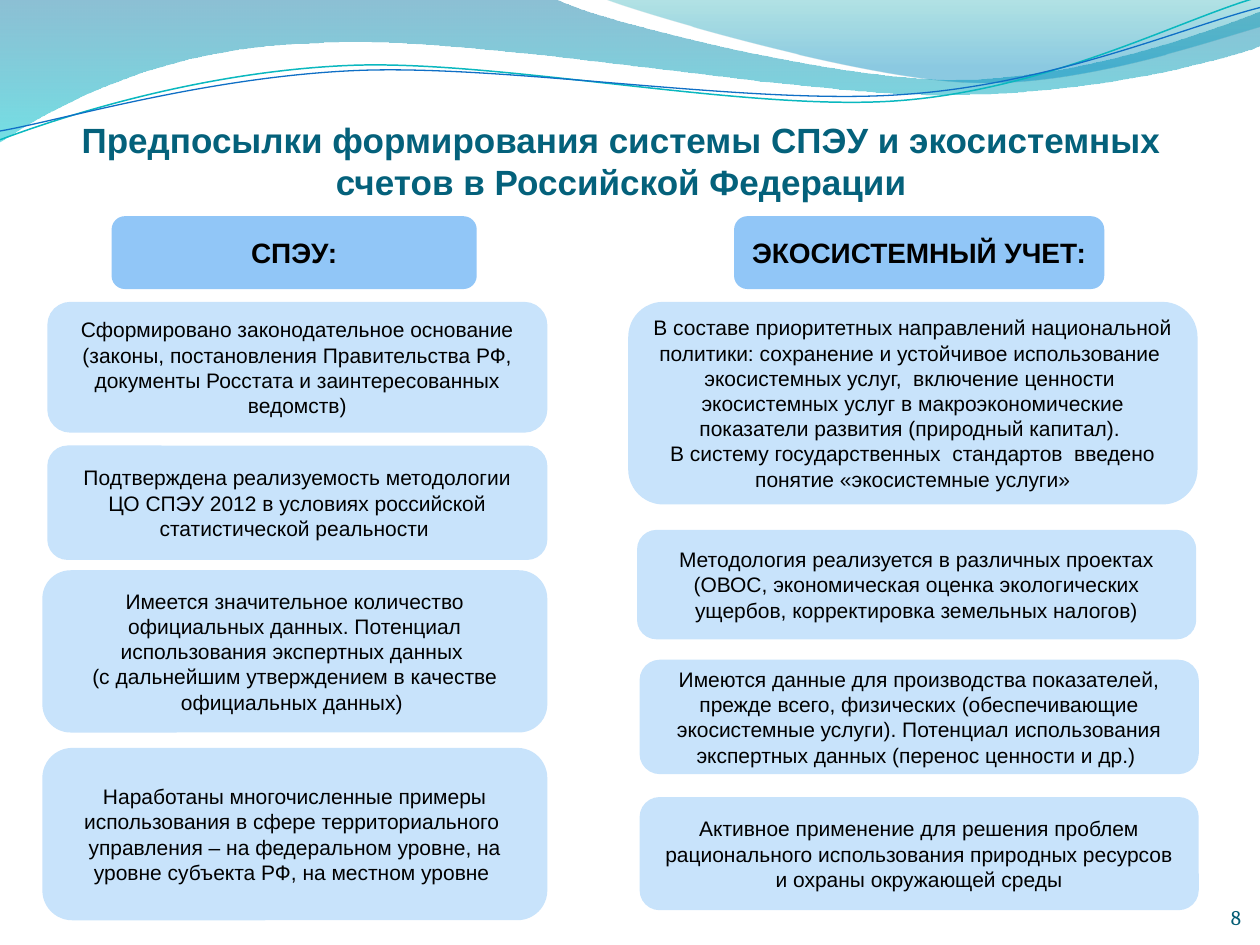
from copy import deepcopy
from dataclasses import dataclass

from lxml import etree
from pptx import Presentation
from pptx.dml.color import RGBColor
from pptx.enum.shapes import MSO_SHAPE
from pptx.enum.text import MSO_ANCHOR, PP_ALIGN
from pptx.oxml.ns import qn
from pptx.util import Inches, Pt

ROUND_RECT = MSO_SHAPE.ROUNDED_RECTANGLE
MIDDLE, BOTTOM = MSO_ANCHOR.MIDDLE, MSO_ANCHOR.BOTTOM
CENTER, RIGHT = PP_ALIGN.CENTER, PP_ALIGN.RIGHT


@dataclass(frozen=True)
class TextStyle:
    size: float
    color: str
    font: str = "Arial"
    bold: bool = False


@dataclass(frozen=True)
class Theme:
    title: TextStyle = TextStyle(20, "04617B", bold=True)
    header: TextStyle = TextStyle(16, "000000", bold=True)
    body: TextStyle = TextStyle(12, "000000")
    number: TextStyle = TextStyle(12, "045D75", "Cambria")
    header_fill: str = "91C6F7"
    body_fill: str = "C8E3FB"
    border: float = 2


THEME = Theme()


@dataclass(frozen=True)
class Box:
    left: float
    top: float
    width: float
    height: float
    text: str
    header: bool = False


@dataclass(frozen=True)
class Stop:
    position: float
    color: str
    opacity: int


@dataclass(frozen=True)
class Wave:
    """Outline of straight (2 numbers) and cubic (6 numbers) segments."""
    start: tuple[float, float]
    segments: list[tuple[float, ...]]
    stops: tuple[Stop, ...] = ()
    line: str = ""
    weight: float = 0


WAVES = [
    Wave((0, 0), [(4.4, -0.01), (4.76, 0.17, 6.64, 0.63, 7.58, 0.63),
                  (8.53, 0.63, 9.58, 0.26, 10, 0.09), (10.01, 0.36),
                  (9.83, 0.44, 8.7, 0.76, 7.46, 0.75),
                  (6.22, 0.75, 3.82, 0.28, 2.57, 0.34),
                  (1.29, 0.36, 0.46, 0.83, -0.01, 1.13), (0, 0)],
         (Stop(0, "0074A1", 45), Stop(1, "00C6CF", 55))),
    Wave((4.79, -0.01), [(5.09, 0.11, 6.82, 0.62, 7.69, 0.65),
                         (8.56, 0.69, 9.61, 0.32, 10, 0.21), (10, 0), (4.79, -0.01)],
         (Stop(0, "00A1A9", 30), Stop(0.8, "008BBF", 45))),
    Wave((0, 1.11), [(0.48, 0.93, 1.58, 0.57, 2.77, 0.52),
                     (3.95, 0.47, 5.93, 0.89, 7.13, 0.8),
                     (8.33, 0.71, 9.38, 0.15, 9.98, -0.02)],
         line="0AB8BF", weight=0.85),
    Wave((0, 1.04), [(0.47, 0.96, 1.64, 0.61, 2.83, 0.56),
                     (4.03, 0.51, 5.97, 0.84, 7.17, 0.75),
                     (8.36, 0.67, 9.41, 0.21, 10, 0.06)],
         line="0F6FC6", weight=0.75),
]

# In the texts "\n" starts a paragraph and "\v" breaks a line.
BOXES = [
    Box(0.9, 1.73, 2.87, 0.55, "СПЭУ:", header=True),
    Box(0.39, 2.41, 3.94, 1.01,
        "Сформировано законодательное основание (законы, постановления Правительства РФ, "
        "документы Росстата и заинтересованных ведомств)"),
    Box(0.39, 3.55, 3.94, 0.88,
        "Подтверждена реализуемость методологии ЦО СПЭУ 2012 в условиях российской "
        "статистической реальности "),
    Box(0.35, 4.54, 3.98, 1.26,
        "Имеется значительное количество официальных данных. Потенциал использования "
        "экспертных данных \v(с дальнейшим утверждением в качестве официальных данных) "),
    Box(0.35, 5.95, 3.98, 1.34,
        "Наработаны многочисленные примеры использования в сфере территориального  "
        "управления – на федеральном уровне, на уровне субъекта РФ, на местном уровне "),
    Box(5.84, 1.73, 2.91, 0.55, "ЭКОСИСТЕМНЫЙ УЧЕТ:", header=True),
    Box(5, 2.41, 4.49, 1.58,
        "В составе приоритетных направлений национальной политики: сохранение и "
        "устойчивое использование  экосистемных услуг,  включение ценности  экосистемных "
        "услуг в макроэкономические показатели развития (природный капитал). \n"
        "В систему государственных  стандартов  введено\nпонятие «экосистемные услуги»"),
    Box(5.07, 4.22, 4.41, 0.84,
        "Методология реализуется в различных проектах (ОВОС, экономическая оценка "
        "экологических ущербов, корректировка земельных налогов)"),
    Box(5.09, 5.25, 4.41, 0.88,
        "Имеются данные для производства показателей, прежде всего, физических "
        "(обеспечивающие экосистемные услуги). Потенциал использования экспертных данных "
        "(перенос ценности и др.) "),
    Box(5.09, 6.34, 4.41, 0.87,
        "Активное применение для решения проблем рационального использования природных "
        "ресурсов и охраны окружающей среды"),
]


def bend_segments(sp, segments: list[tuple[float, ...]]) -> None:
    """Turn the straight segments that have control points into cubic curves."""
    for line, segment in zip(list(sp.element.iter(qn("a:lnTo"))), segments):
        if len(segment) == 2:
            continue
        curve = etree.Element(qn("a:cubicBezTo"))
        for x, y in zip(segment[::2], segment[1::2]):
            etree.SubElement(curve, qn("a:pt"), x=str(Inches(x) - sp.left),
                             y=str(Inches(y) - sp.top))
        line.getparent().replace(line, curve)


def draw_wave(s, wave: Wave) -> None:
    builder = s.shapes.build_freeform(*map(Inches, wave.start))
    ends = [(Inches(segment[-2]), Inches(segment[-1])) for segment in wave.segments]
    builder.add_line_segments(ends, close=bool(wave.stops))
    sp = builder.convert_to_shape()
    bend_segments(sp, wave.segments)
    sp.shadow.inherit = False
    if not wave.stops:
        sp.fill.background()
        sp.line.color.rgb = RGBColor.from_string(wave.line)
        sp.line.width = Pt(wave.weight)
        return
    sp.line.fill.background()
    sp.fill.gradient()
    sp.fill.gradient_angle = 270
    for target, stop in zip(sp.fill.gradient_stops, wave.stops):
        target.position = stop.position
        target.color.rgb = RGBColor.from_string(stop.color)
    for color, stop in zip(sp.element.iter(qn("a:srgbClr")), wave.stops):
        etree.SubElement(color, qn("a:alpha"), val=str(stop.opacity * 1000))


def write_text(sp, text: str, style: TextStyle, anchor=MIDDLE, align=CENTER,
               margins: tuple[float, ...] = (0.1, 0.05, 0.1, 0.05)) -> None:
    tf = sp.text_frame
    tf.text = text
    tf.word_wrap = True
    tf.vertical_anchor = anchor
    for side, margin in zip(("left", "top", "right", "bottom"), margins):
        setattr(tf, f"margin_{side}", Inches(margin))
    font_format = {"size": Pt(style.size), "name": style.font, "bold": style.bold}
    for p in tf.paragraphs:
        p.alignment = align
        for r in p.runs:
            for name, value in font_format.items():
                setattr(r.font, name, value)
            r.font.color.rgb = RGBColor.from_string(style.color)
        for br in p._p.findall(qn("a:br")):
            br.append(deepcopy(p.runs[0]._r.rPr))


def draw_box(s, box: Box) -> None:
    sp = s.shapes.add_shape(ROUND_RECT, Inches(box.left), Inches(box.top),
                            Inches(box.width), Inches(box.height))
    sp.shadow.inherit = False
    color = RGBColor.from_string(THEME.header_fill if box.header else THEME.body_fill)
    sp.fill.solid()
    sp.fill.fore_color.rgb = color
    sp.line.color.rgb = color
    sp.line.width = Pt(THEME.border)
    write_text(sp, box.text, THEME.header if box.header else THEME.body)


def main() -> None:
    prs = Presentation()
    prs.slide_width, prs.slide_height = Inches(10), Inches(7.5)
    s = prs.slides.add_slide(prs.slide_layouts[5])
    for wave in WAVES:
        draw_wave(s, wave)
    title = s.shapes.title
    title.left, title.top, title.width, title.height = map(Inches, (0.43, 0.36, 9, 1.25))
    write_text(title, "Предпосылки формирования системы СПЭУ и экосистемных счетов "
               "в Российской Федерации", THEME.title, BOTTOM, margins=(0, 0.05, 0, 0))
    for box in BOXES:
        draw_box(s, box)
    number = s.shapes.add_textbox(*map(Inches, (9.02, 6.98, 0.83, 0.4)))
    write_text(number, "8", THEME.number, BOTTOM, RIGHT, (0, 0, 0, 0))
    prs.save("out.pptx")


if __name__ == "__main__":
    main()
